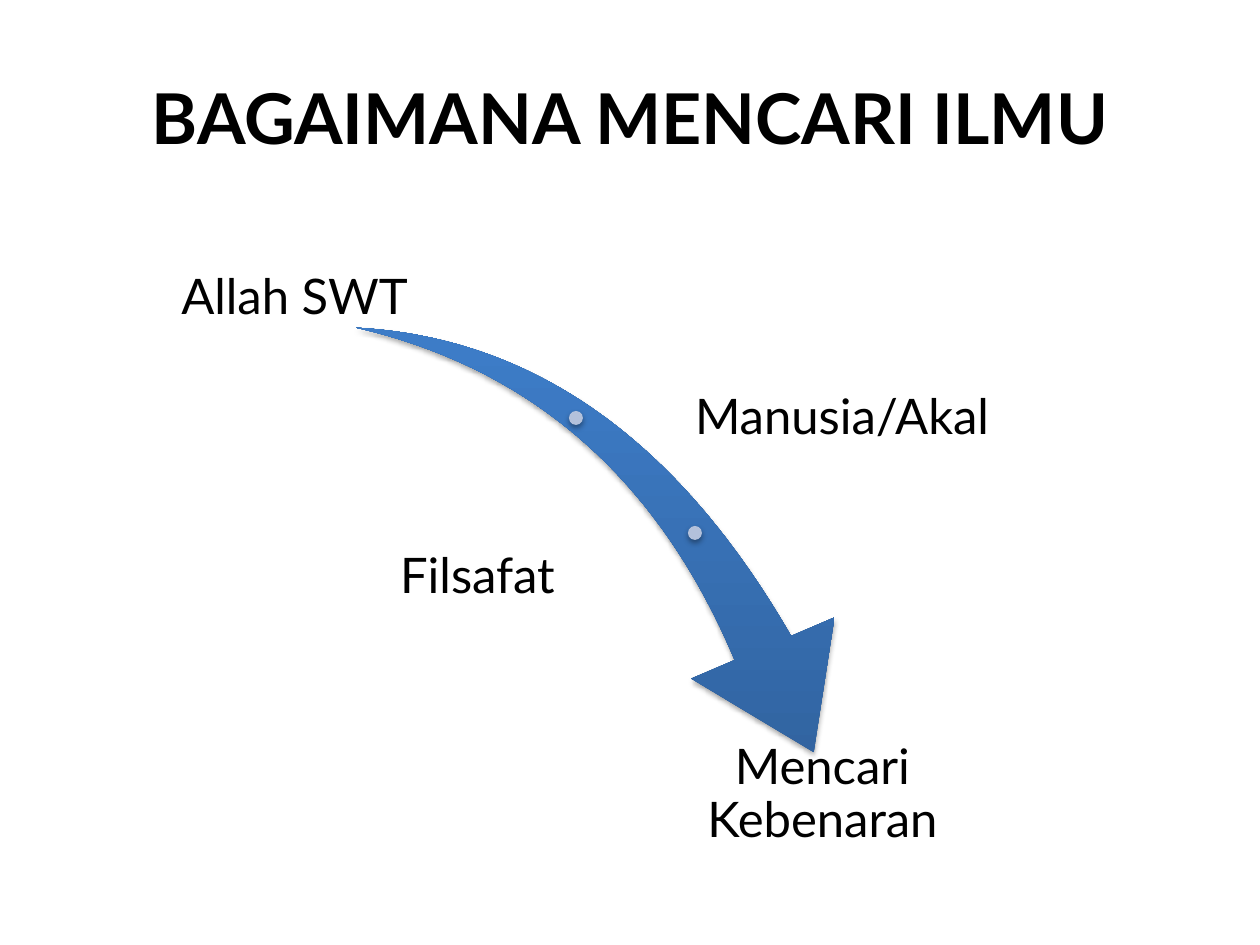
import dataclasses

import pptx
import pptx.dml.color
import pptx.enum.shapes
import pptx.enum.text
import pptx.oxml
import pptx.oxml.ns
import pptx.util

PX = 914400 // 126
NAMESPACE = pptx.oxml.ns.nsdecls("a")


@dataclasses.dataclass(frozen=True)
class Theme:
    """Colours, font and type sizes of the slide."""
    font: str = "Lato"
    text: str = "000000"
    shadow: str = "000000"
    dot: str = "B3C1DB"
    arrow_stops: tuple = ((0, "2F5F99"), (80, "3D7CC7"), (100, "3A7CCB"))
    title_size: int = 40
    label_size: int = 28


THEME = Theme()


def px(*lengths):
    """Turn pixel lengths into EMU."""
    return [pptx.util.Emu(length * PX) for length in lengths]


def add_shadow(shape):
    """Give a shape a soft shadow straight below it."""
    shape.shadow.inherit = False
    effects = shape._element.spPr.find(pptx.oxml.ns.qn("a:effectLst"))
    effects.append(pptx.oxml.parse_xml(
        f'<a:outerShdw {NAMESPACE} blurRad="39370" dist="22860" dir="5400000" rotWithShape="0">'
        f'<a:srgbClr val="{THEME.shadow}"><a:alpha val="35000"/></a:srgbClr></a:outerShdw>'))


def add_arrow(slide, box, rotation, adjustments):
    """Add the swoosh arrow with its vertical gradient."""
    shape = slide.shapes.add_shape(pptx.enum.shapes.MSO_SHAPE.SWOOSH_ARROW, *px(*box))
    shape.rotation = rotation
    for index, value in enumerate(adjustments):
        shape.adjustments[index] = value
    shape.line.fill.background()
    shape.fill.gradient()
    properties = shape._element.spPr
    stops = "".join(f'<a:gs pos="{place * 1000}"><a:srgbClr val="{colour}"/></a:gs>'
                    for place, colour in THEME.arrow_stops)
    gradient = pptx.oxml.parse_xml(
        f'<a:gradFill {NAMESPACE} rotWithShape="0"><a:gsLst>{stops}</a:gsLst>'
        '<a:lin ang="16200000" scaled="0"/></a:gradFill>')
    properties.replace(properties.find(pptx.oxml.ns.qn("a:gradFill")), gradient)
    add_shadow(shape)


def add_dot(slide, left, top, size=14):
    """Add a round marker on the arrow."""
    shape = slide.shapes.add_shape(pptx.enum.shapes.MSO_SHAPE.OVAL, *px(left, top, size, size))
    shape.fill.solid()
    shape.fill.fore_color.rgb = pptx.dml.color.RGBColor.from_string(THEME.dot)
    shape.line.fill.background()
    add_shadow(shape)


def add_text(slide, text, box, size, bold=False):
    """Add centred text in the middle of a box and return its paragraph."""
    text_frame = slide.shapes.add_textbox(*px(*box)).text_frame
    text_frame.word_wrap = True
    text_frame.vertical_anchor = pptx.enum.text.MSO_ANCHOR.MIDDLE
    text_frame.margin_left = text_frame.margin_right = px(5)[0]
    text_frame.margin_top = text_frame.margin_bottom = px(5)[0]
    text_frame.text = text
    paragraph = text_frame.paragraphs[0]
    paragraph.alignment = pptx.enum.text.PP_ALIGN.CENTER
    font = paragraph.runs[0].font
    font.name = THEME.font
    font.size = pptx.util.Pt(size)
    font.bold = bold
    font.color.rgb = pptx.dml.color.RGBColor.from_string(THEME.text)
    return paragraph


def add_label(slide, text, box):
    """Add a label beside the arrow."""
    paragraph = add_text(slide, text, box, THEME.label_size)
    paragraph.line_spacing = 0.9
    paragraph.space_after = pptx.util.Pt(10)


def main():
    """Build the slide and save it."""
    presentation = pptx.Presentation()
    presentation.slide_width, presentation.slide_height = map(pptx.util.Inches, (10, 7.5))
    slide = presentation.slides.add_slide(presentation.slide_layouts[6])

    add_arrow(slide, (344, 344, 538, 375), 73.3, (0.163, 0.314))
    for left, top in ((569, 411), (688, 526)):
        add_dot(slide, left, top)
    for text, box in (
        ("Allah SWT", (125, 260, 339, 78)),
        ("Manusia/Akal", (667, 369, 350, 100)),
        ("Filsafat", (306, 528, 343, 100)),
        ("Mencari Kebenaran", (651, 745, 343, 100)),
    ):
        add_label(slide, text, box)
    add_text(slide, "BAGAIMANA MENCARI ILMU", (63, 38, 1134, 158), THEME.title_size, bold=True)

    presentation.save("out.pptx")


if __name__ == "__main__":
    main()
